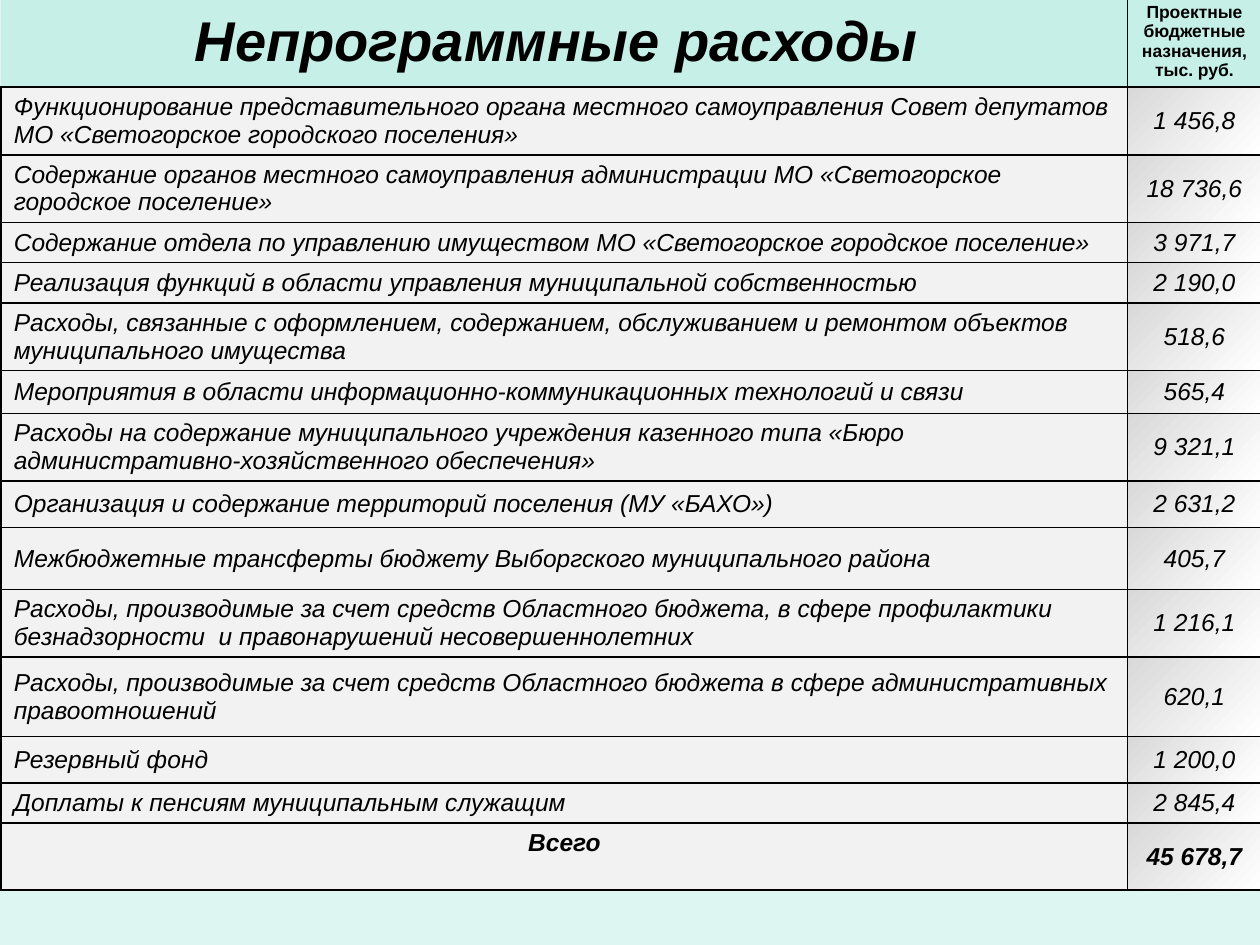
from dataclasses import dataclass

import pptx
import pptx.dml.color
import pptx.enum.text
import pptx.oxml
import pptx.oxml.ns
import pptx.util
from pptx.util import Inches

MIDDLE = pptx.enum.text.MSO_ANCHOR.MIDDLE
TOP = pptx.enum.text.MSO_ANCHOR.TOP
LEFT = pptx.enum.text.PP_ALIGN.LEFT
CENTER = pptx.enum.text.PP_ALIGN.CENTER


@dataclass(frozen=True)
class Theme:
    font: str = "Arial"
    background: str = "DEF6F1"
    header_fill: str = "C6F0E7"
    label_fill: str = "F2F2F2"
    amount_gradient: tuple = ("D9D9D9", "FFFFFF")
    ink: str = "000000"
    title_size: int = 32
    unit_size: int = 10
    body_size: int = 14
    border_width: int = 1


THEME = Theme()

TITLE = "Непрограммные расходы "
UNIT = "Проектные бюджетные назначения, тыс. руб."
HEADER_HEIGHT = 0.71
ONE_LINE = 0.31
TWO_LINES = 0.53
COLUMN_WIDTHS = (8.94, 1.06)

# Label, amount, row height in inches
EXPENSES = [
    ("Функционирование представительного органа местного самоуправления Совет депутатов "
     "МО «Светогорское городского поселения»", "1 456,8", TWO_LINES),
    ("Содержание органов местного самоуправления администрации МО «Светогорское "
     "городское поселение»", "18 736,6", TWO_LINES),
    ("Содержание отдела по управлению имуществом МО «Светогорское городское поселение»",
     "3 971,7", ONE_LINE),
    ("Реализация функций в области управления муниципальной собственностью",
     "2 190,0", ONE_LINE),
    ("Расходы, связанные с оформлением, содержанием, обслуживанием и ремонтом объектов "
     "муниципального имущества", "518,6", TWO_LINES),
    ("Мероприятия в области информационно-коммуникационных технологий и связи",
     "565,4", 0.34),
    ("Расходы на содержание муниципального учреждения казенного типа «Бюро "
     "административно-хозяйственного обеспечения»", "9 321,1", TWO_LINES),
    ("Организация и содержание территорий поселения (МУ «БАХО»)", "2 631,2", 0.37),
    ("Межбюджетные трансферты бюджету Выборгского муниципального района", "405,7", 0.49),
    ("Расходы, производимые за счет средств Областного бюджета, в сфере профилактики "
     "безнадзорности  и правонарушений несовершеннолетних", "1 216,1", TWO_LINES),
    ("Расходы, производимые за счет средств Областного бюджета в сфере административных "
     "правоотношений", "620,1", 0.63),
    ("Резервный фонд", "1 200,0", 0.37),
    ("Доплаты к пенсиям муниципальным служащим", "2 845,4", ONE_LINE),
]
TOTAL = ("Всего", "45 678,7", TWO_LINES)


def rgb(value):
    return pptx.dml.color.RGBColor.from_string(value)


def set_borders(cell, visible):
    """Draw the named sides (L, R, T, B) and hide the others."""
    properties = cell._tc.get_or_add_tcPr()
    width = pptx.util.Pt(THEME.border_width)
    for side in "LRTB":
        paint = "<a:noFill/>"
        if side in visible:
            paint = f'<a:solidFill><a:srgbClr val="{THEME.ink}"/></a:solidFill>'
        properties.append(pptx.oxml.parse_xml(
            f'<a:ln{side} {pptx.oxml.ns.nsdecls("a")} w="{width}">{paint}</a:ln{side}>'))


def fill_cell(cell, fill):
    """Fill with one colour, or with a diagonal gradient for a pair of colours."""
    if isinstance(fill, str):
        cell.fill.solid()
        cell.fill.fore_color.rgb = rgb(fill)
        return
    cell.fill.gradient()
    cell.fill.gradient_angle = 315
    for stop, position, color in zip(cell.fill.gradient_stops, (0, 1), fill):
        stop.position = position
        stop.color.rgb = rgb(color)


def write_cell(cell, text, fill, size, alignment=CENTER, bold=False, italic=True,
               anchor=MIDDLE, borders="LRTB"):
    set_borders(cell, borders)
    fill_cell(cell, fill)
    cell.vertical_anchor = anchor
    cell.margin_left = cell.margin_right = Inches(0.1)
    cell.margin_top = cell.margin_bottom = Inches(0.05)
    paragraph = cell.text_frame.paragraphs[0]
    paragraph.alignment = alignment
    run = paragraph.add_run()
    run.text = text
    run.font.name = THEME.font
    run.font.size = pptx.util.Pt(size)
    run.font.bold = bold
    run.font.italic = italic
    run.font.color.rgb = rgb(THEME.ink)


def write_header(label_cell, amount_cell):
    write_cell(label_cell, TITLE, THEME.header_fill, THEME.title_size,
               bold=True, borders="RB")
    write_cell(amount_cell, UNIT, THEME.header_fill, THEME.unit_size,
               bold=True, italic=False, borders="LRB")


def write_row(cells, label, amount, is_total=False):
    label_cell, amount_cell = cells
    write_cell(label_cell, label, THEME.label_fill, THEME.body_size,
               alignment=CENTER if is_total else LEFT, bold=is_total,
               anchor=TOP if is_total else MIDDLE)
    write_cell(amount_cell, amount, THEME.amount_gradient, THEME.body_size, bold=is_total)


def add_expense_table(slide, left, top):
    entries = EXPENSES + [TOTAL]
    heights = [HEADER_HEIGHT] + [height for _, _, height in entries]
    table = slide.shapes.add_table(
        len(heights), len(COLUMN_WIDTHS), left, top,
        Inches(sum(COLUMN_WIDTHS)), Inches(sum(heights))).table
    table.horz_banding = False
    for column, width in zip(table.columns, COLUMN_WIDTHS):
        column.width = Inches(width)
    for row, height in zip(table.rows, heights):
        row.height = Inches(height)
    write_header(table.cell(0, 0), table.cell(0, 1))
    for index, entry in enumerate(entries, start=1):
        label, amount, _ = entry
        write_row(table.rows[index].cells, label, amount, is_total=entry is TOTAL)


def main():
    presentation = pptx.Presentation()
    presentation.slide_width = Inches(10)
    presentation.slide_height = Inches(7.5)
    slide = presentation.slides.add_slide(presentation.slide_layouts.get_by_name("Blank"))
    slide.background.fill.solid()
    slide.background.fill.fore_color.rgb = rgb(THEME.background)
    add_expense_table(slide, Inches(0.01), Inches(-0.03))
    presentation.save("out.pptx")


if __name__ == "__main__":
    main()
